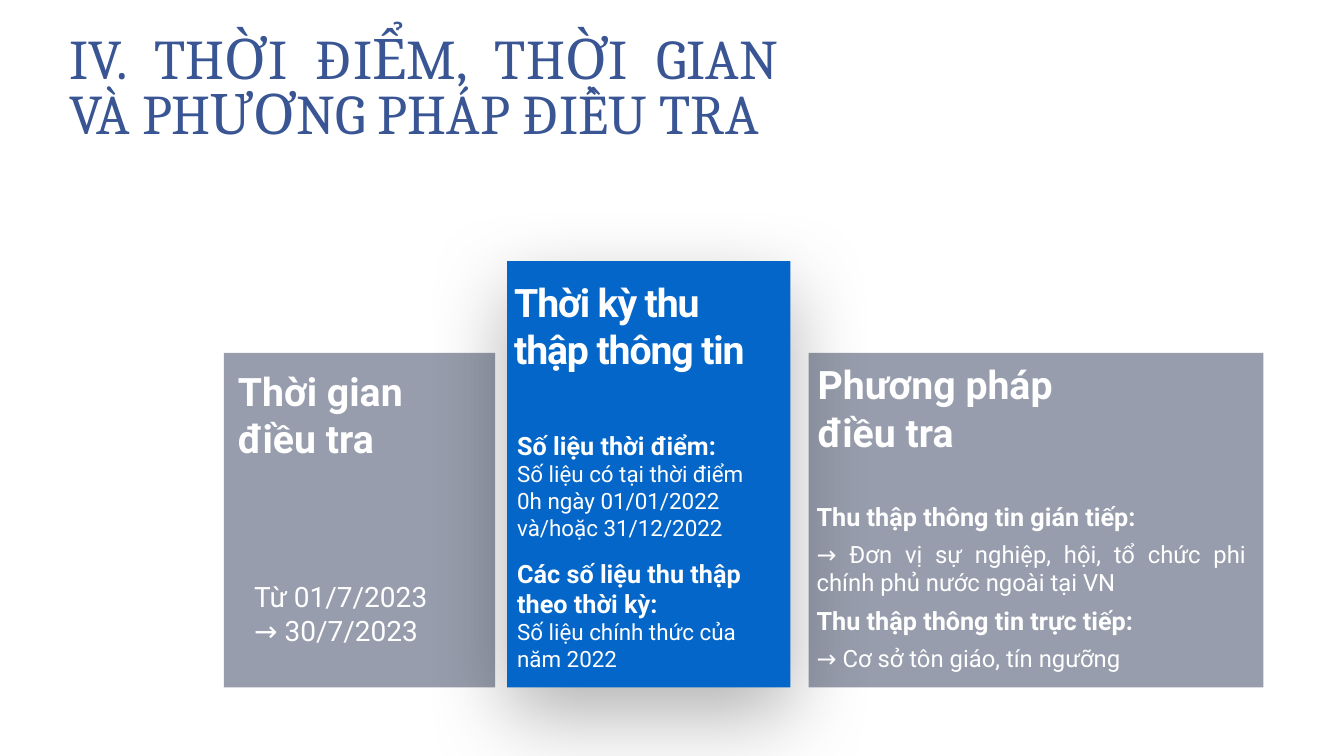
"""Builds the slide on the timing and methods of the survey."""
from lxml import etree
from pptx import Presentation, util as u
from pptx.dml.color import RGBColor
from pptx.enum import shapes, text
from pptx.oxml.ns import qn

PX = 9144
WHITE, GREY, BLUE, NAVY = "FFFFFF", "979DAC", "0466C8", "395594"
JUST = text.PP_ALIGN.JUSTIFY

CARDS = [
    ((222, 350, 269, 332), GREY),
    ((802, 350, 451, 332), GREY),
    ((503, 259, 281, 423), BLUE),
]
DATES = ["Từ 01/7/2023", "→ 30/7/2023"]
TITLE = "IV. THỜI ĐIỂM, THỜI GIAN VÀ PHƯƠNG PHÁP ĐIỀU TRA"
HEADS = [
    ((236, 359, 202, 104), "Thời gian điều tra", 24, 0),
    ((510, 271, 259, 104), "Thời kỳ thu thập thông tin", 24, -80),
    ((811, 353, 260, 104), "Phương pháp điều tra", 12, 0),
]
PERIOD = [
    ("Số liệu thời điểm:", 18, True, 0),
    ("Số liệu có tại thời điểm 0h ngày 01/01/2022 và/hoặc 31/12/2022", 16, False, 12),
    ("Các số liệu thu thập theo thời kỳ:", 18, True, 0),
    ("Số liệu chính thức của năm 2022", 16, False, 0),
]
METHODS = [
    ("Thu thập thông tin gián tiếp:", 18, True, 3),
    ("→ Đơn vị sự nghiệp, hội, tổ chức phi chính phủ nước ngoài tại VN", 17, False, 3),
    ("Thu thập thông tin trực tiếp:", 18, True, 3),
    ("→ Cơ sở tôn giáo, tín ngưỡng", 17, False, 3),
]


def rgb(code):
    return RGBColor.from_string(code)


def px(*vals):
    return [v * PX for v in vals]


def inset(frame, left, top, right, bottom):
    frame.word_wrap = True
    (frame.margin_left, frame.margin_top,
     frame.margin_right, frame.margin_bottom) = px(left, top, right, bottom)


def card(slide, box, fill):
    shape = slide.shapes.add_shape(shapes.MSO_SHAPE.RECTANGLE, *px(*box))
    shape.shadow.inherit = False
    shape.fill.solid()
    shape.fill.fore_color.rgb = rgb(fill)
    shape.line.fill.background()
    return shape


def label(slide, box, pad=5):
    frame = slide.shapes.add_textbox(*px(*box)).text_frame
    inset(frame, 0, pad, 0, pad)
    return frame


def write(frame, lines, align=text.PP_ALIGN.LEFT, before=0, face="Roboto", color=WHITE):
    for i, (words, size, bold, after) in enumerate(lines):
        para = frame.paragraphs[0] if i == 0 else frame.add_paragraph()
        para.text = words
        para.alignment = align
        para.space_before, para.space_after = u.Pt(before), u.Pt(after)
        font = para.font
        font.name, font.size, font.bold = face, u.Pt(size), bold
        font.color.rgb = rgb(color)


def shade(shape):
    glow = etree.SubElement(
        shape._element.spPr.find(qn("a:effectLst")), qn("a:outerShdw"),
        blurRad=str(u.Pt(60)), dist=str(u.Pt(20)), dir="5400000",
        algn="t", rotWithShape="0")
    tone = etree.SubElement(glow, qn("a:srgbClr"), val="000000")
    etree.SubElement(tone, qn("a:alpha"), val="30000")


def main():
    deck = Presentation()
    deck.slide_width, deck.slide_height = px(1333, 750)
    slide = deck.slides.add_slide(deck.slide_layouts[6])

    left, right, mid = [card(slide, *item) for item in CARDS]
    shade(mid)
    frame = left.text_frame
    inset(frame, 30, 35, 30, 40)
    frame.vertical_anchor = text.MSO_ANCHOR.BOTTOM
    write(frame, [(line, 20, False, 0) for line in DATES])

    frame = label(slide, (69, 36, 703, 109), 0)
    write(frame, [(TITLE, 40, False, 0)], JUST, face="Cambria", color=NAVY)
    frame.paragraphs[0].line_spacing = u.Pt(39)

    for box, words, before, track in HEADS:
        frame = label(slide, box)
        write(frame, [(words, 28, True, 0)], before=before)
        if track:
            frame.paragraphs[0].runs[0].font._element.set("spc", str(track))

    write(label(slide, (513, 422, 253, 252)), PERIOD)
    write(label(slide, (810, 492, 426, 182)), METHODS, JUST, 3)
    deck.save("out.pptx")


if __name__ == "__main__":
    main()
